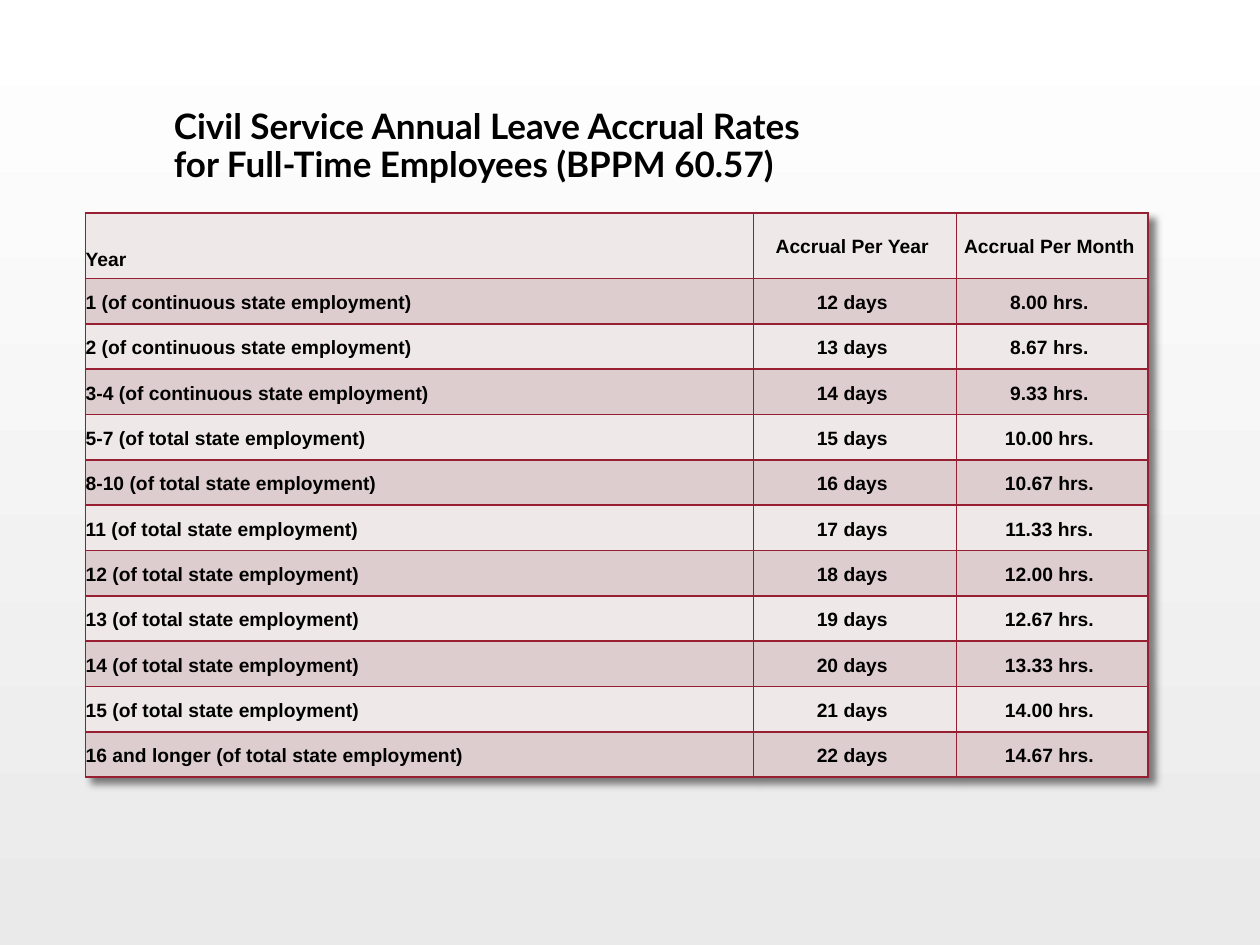
from dataclasses import dataclass

import lxml.etree
import pptx
import pptx.dml.color
import pptx.enum.text
import pptx.oxml
import pptx.oxml.ns
import pptx.util

Inches, Pt = pptx.util.Inches, pptx.util.Pt
Anchor, Align = pptx.enum.text.MSO_ANCHOR, pptx.enum.text.PP_ALIGN


@dataclass(frozen=True)
class Theme:
    title_font: str = "Lato"
    body_font: str = "Arial"
    title_size: int = 20
    body_size: int = 11
    text: str = "000000"
    border: str = "981E32"
    border_width: int = 1
    bands: tuple = ("EFE8E8", "DDCDCE")
    background: tuple = ("EAEAEA", "FFFFFF")


THEME = Theme()
SLIDE_WIDTH, SLIDE_HEIGHT = 10, 7.5
TITLE_BOX = (0.88, 0.81, 8.5, 0.71)
TABLE_BOX = (0.68, 1.69, 8.43, 4.48)
COLUMN_SHARES = (5.3, 1.61, 1.52)
HEADER_SHARE = 0.52 / 4.48
YEAR_HEADER_DROP = 0.2

TITLE = "Civil Service Annual Leave Accrual Rates\vfor Full-Time Employees (BPPM 60.57)"
HEADERS = ("Year", "Accrual Per Year ", "Accrual Per Month ")
CONTINUOUS, TOTAL = "continuous", "total"
ACCRUALS = (
    ("1", CONTINUOUS, 12, "8.00"),
    ("2", CONTINUOUS, 13, "8.67"),
    ("3-4", CONTINUOUS, 14, "9.33"),
    ("5-7", TOTAL, 15, "10.00"),
    ("8-10", TOTAL, 16, "10.67"),
    ("11", TOTAL, 17, "11.33"),
    ("12", TOTAL, 18, "12.00"),
    ("13", TOTAL, 19, "12.67"),
    ("14", TOTAL, 20, "13.33"),
    ("15", TOTAL, 21, "14.00"),
    ("16 and longer", TOTAL, 22, "14.67"),
)


def rgb(value):
    return pptx.dml.color.RGBColor.from_string(value)


def style_font(paragraph, name, size):
    for run in paragraph.runs:
        run.font.name = name
        run.font.size = Pt(size)
        run.font.bold = True
        run.font.color.rgb = rgb(THEME.text)


def set_background(slide):
    fill = slide.background.fill
    fill.gradient()
    fill.gradient_angle = 90
    for stop, position, color in zip(fill.gradient_stops, (0, 1), THEME.background):
        stop.position = position
        stop.color.rgb = rgb(color)


def place_title(title, box):
    title.left, title.top, title.width, title.height = map(Inches, box)
    frame = title.text_frame
    frame.text = TITLE
    frame.word_wrap = True
    frame.auto_size = pptx.enum.text.MSO_AUTO_SIZE.SHAPE_TO_FIT_TEXT
    frame.vertical_anchor = Anchor.BOTTOM
    frame.margin_left = frame.margin_right = Inches(0.5)
    frame.margin_top = frame.margin_bottom = Inches(0.05)
    paragraph = frame.paragraphs[0]
    paragraph.alignment = Align.LEFT
    paragraph.line_spacing = 0.9
    style_font(paragraph, THEME.title_font, THEME.title_size)


def add_borders(cell):
    properties = cell._tc.get_or_add_tcPr()
    for index, side in enumerate(("lnL", "lnR", "lnT", "lnB")):
        line = pptx.oxml.parse_xml(
            f'<a:{side} {pptx.oxml.ns.nsdecls("a")} w="{Pt(THEME.border_width)}">'
            f'<a:solidFill><a:srgbClr val="{THEME.border}"/></a:solidFill></a:{side}>'
        )
        properties.insert(index, line)


def add_table_shadow(table):
    effects = pptx.oxml.parse_xml(
        f'<a:effectLst {pptx.oxml.ns.nsdecls("a")}>'
        f'<a:outerShdw blurRad="{Pt(4)}" dist="{Pt(5)}" dir="2700000" algn="tl" rotWithShape="0">'
        '<a:srgbClr val="000000"><a:alpha val="50000"/></a:srgbClr>'
        "</a:outerShdw></a:effectLst>"
    )
    table._tbl.tblPr.insert(0, effects)


def fill_cell(cell, text, color, centered):
    cell.text_frame.text = text
    cell.vertical_anchor = Anchor.MIDDLE
    cell.margin_left = cell.margin_right = cell.margin_top = cell.margin_bottom = 0
    cell.fill.solid()
    cell.fill.fore_color.rgb = rgb(color)
    add_borders(cell)
    paragraph = cell.text_frame.paragraphs[0]
    paragraph.line_spacing = 1.15
    if centered:
        paragraph.alignment = Align.CENTER
        paragraph.space_after = Pt(10)
    style_font(paragraph, THEME.body_font, THEME.body_size)


def place_accrual_table(slide, box):
    rows = [HEADERS] + [
        (f"{years} (of {kind} state employment)", f"{days} days ", f"{hours} hrs. ")
        for years, kind, days, hours in ACCRUALS
    ]
    left, top, width, height = box
    table = slide.shapes.add_table(len(rows), len(HEADERS), *map(Inches, box)).table
    for column, share in zip(table.columns, COLUMN_SHARES):
        column.width = Inches(width * share / sum(COLUMN_SHARES))
    header_height = height * HEADER_SHARE
    row_height = (height - header_height) / len(ACCRUALS)
    for row_index, texts in enumerate(rows):
        table.rows[row_index].height = Inches(row_height if row_index else header_height)
        for column_index, text in enumerate(texts):
            color = THEME.bands[row_index % 2]
            fill_cell(table.cell(row_index, column_index), text, color, column_index > 0)
    table.cell(0, 0).margin_top = Inches(YEAR_HEADER_DROP)
    add_table_shadow(table)


def main():
    presentation = pptx.Presentation()
    presentation.slide_width = Inches(SLIDE_WIDTH)
    presentation.slide_height = Inches(SLIDE_HEIGHT)
    slide = presentation.slides.add_slide(presentation.slide_layouts.get_by_name("Title Only"))
    set_background(slide)
    place_title(slide.shapes.title, TITLE_BOX)
    place_accrual_table(slide, TABLE_BOX)
    presentation.save("out.pptx")


if __name__ == "__main__":
    main()
